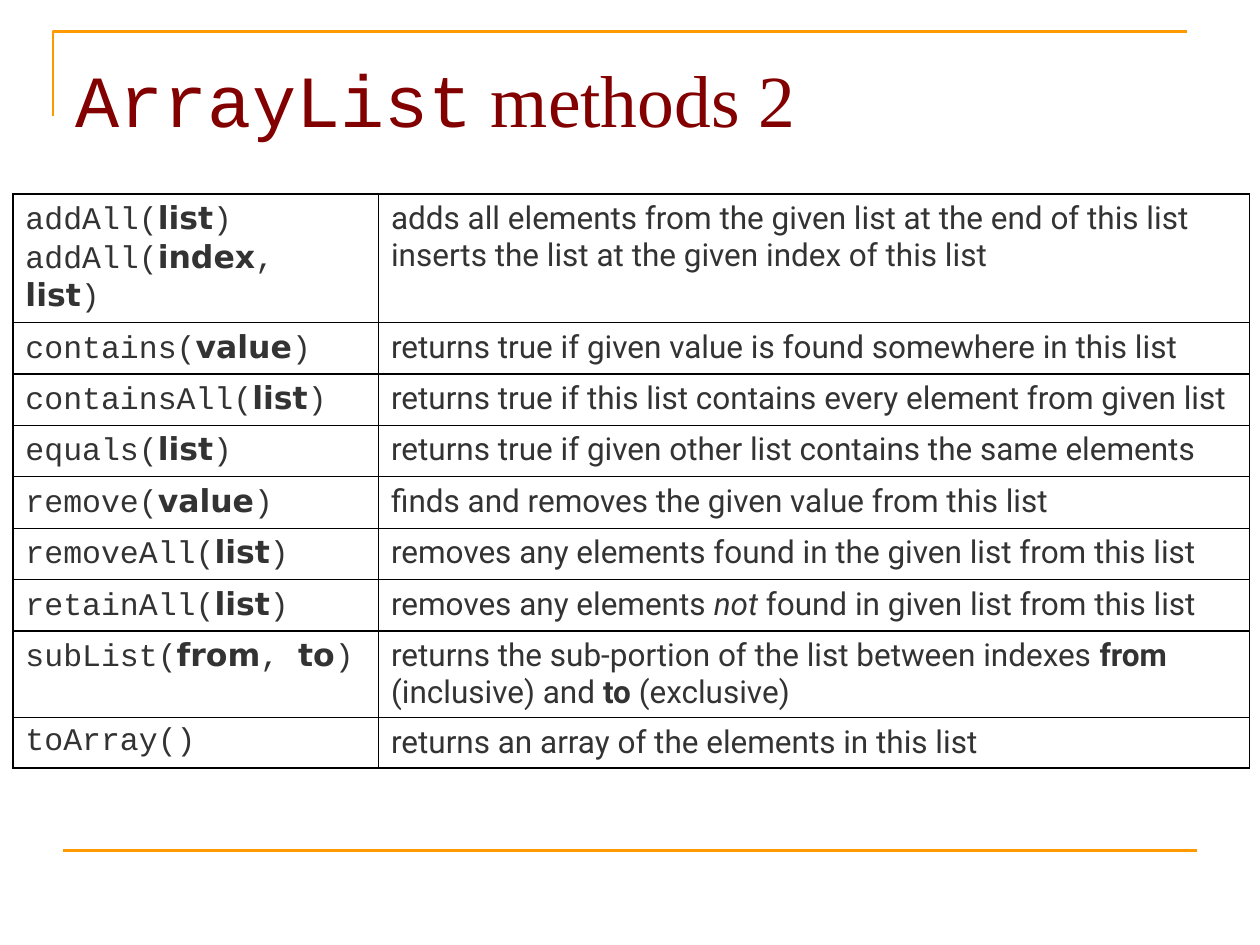
from lxml.etree import SubElement
from pptx import Presentation
from pptx.dml.color import RGBColor
from pptx.enum.shapes import MSO_CONNECTOR as Connector
from pptx.enum.text import MSO_ANCHOR as Anchor, PP_ALIGN as Align
from pptx.oxml.ns import qn
from pptx.util import Cm, Pt

ORANGE = RGBColor(0xFF, 0x99, 0x00)
MAROON = RGBColor(0x82, 0x00, 0x00)
GREY = RGBColor(0x33, 0x33, 0x33)
BLACK = RGBColor(0x00, 0x00, 0x00)

CODE, ARGUMENT, PROSE, HEADING = "Courier New", "DejaVu Sans", "Roboto", "Times New Roman"

# Each row: height in cm, method lines, description lines (*bold*, _italic_)
METHODS = [
    (2.58, ["addAll(*list*)", "addAll(*index*, *list*)"],
     ["adds all elements from the given list at the end of this list",
      "inserts the list at the given index of this list"]),
    (1.04, ["contains(*value*)"],
     ["returns true if given value is found somewhere in this list"]),
    (1.03, ["containsAll(*list*)"],
     ["returns true if this list contains every element from given list"]),
    (1.03, ["equals(*list*)"],
     ["returns true if given other list contains the same elements"]),
    (1.04, ["remove(*value*)"],
     ["finds and removes the given value from this list"]),
    (1.03, ["removeAll(*list*)"],
     ["removes any elements found in the given list from this list"]),
    (1.03, ["retainAll(*list*)"],
     ["removes any elements _not_ found in given list from this list"]),
    (1.75, ["subList(*from*, *to*)"],
     ["returns the sub-portion of the list between indexes *from*"
      " (inclusive) and *to *(exclusive)"]),
    (1.01, ["toArray()"],
     ["returns an array of the elements in this list"]),
]


def add_run(paragraph, text, **font_format):
    run = paragraph.add_run()
    run.text = text
    color = font_format.pop("color")
    for name, value in font_format.items():
        setattr(run.font, name, value)
    run.font.color.rgb = color


def fill_cell(cell, lines, plain_font, bold_font):
    cell.fill.background()
    frame = cell.text_frame
    for number, line in enumerate(lines):
        paragraph = frame.add_paragraph() if number else frame.paragraphs[0]
        for i, part in enumerate(line.split("*")):
            for j, piece in enumerate(part.split("_")):
                if piece:
                    add_run(paragraph, piece, name=bold_font if i % 2 else plain_font,
                            size=Pt(18), bold=i % 2 == 1, italic=j % 2 == 1, color=GREY)
    # Thin black border on all four sides, placed before the fill
    properties = cell._tc.get_or_add_tcPr()
    for position, side in enumerate(("a:lnL", "a:lnR", "a:lnT", "a:lnB")):
        border = SubElement(properties, qn(side), w=str(Pt(1)))
        SubElement(SubElement(border, qn("a:solidFill")), qn("a:srgbClr"), val=str(BLACK))
        properties.insert(position, border)


deck = Presentation()
deck.slide_width, deck.slide_height = Cm(25.4), Cm(19.05)
slide = deck.slides.add_slide(deck.slide_layouts[5])

# Corner rule above the title
builder = slide.shapes.build_freeform(Cm(1.07), Cm(2.34))
builder.add_line_segments([(Cm(1.07), Cm(0.64)), (Cm(23.93), Cm(0.64))], close=False)
corner_rule = builder.convert_to_shape()
corner_rule.fill.background()
corner_rule.shadow.inherit = False

# Rule at the foot
foot_rule = slide.shapes.add_connector(
    Connector.STRAIGHT, Cm(1.27), Cm(17.15), Cm(24.13), Cm(17.15))
SubElement(foot_rule._element.spPr, qn("a:effectLst"))

for rule in (corner_rule, foot_rule):
    rule.line.color.rgb = ORANGE
    rule.line.width = Pt(1.5)

# Title
title = slide.shapes.title
title_box = {"left": Cm(1.27), "top": Cm(0.76), "width": Cm(22.86), "height": Cm(2.62)}
for name, value in title_box.items():
    setattr(title, name, value)
title.text_frame.vertical_anchor = Anchor.TOP
title.text_frame.margin_top = Cm(0.32)
heading = title.text_frame.paragraphs[0]
heading.alignment = Align.LEFT
for text, font in (("ArrayList", CODE), (" methods 2", HEADING)):
    add_run(heading, text, name=font, size=Pt(42), color=MAROON)

# Method table
table_height = Cm(sum(height for height, _, _ in METHODS))
table = slide.shapes.add_table(
    len(METHODS), 2, Cm(0.26), Cm(3.91), Cm(24.93), table_height).table
table.first_row = table.horz_banding = False
for column, width in zip(table.columns, (7.37, 17.56)):
    column.width = Cm(width)
for row, (height, calls, description) in zip(table.rows, METHODS):
    row.height = Cm(height)
    fill_cell(row.cells[0], calls, CODE, ARGUMENT)
    fill_cell(row.cells[1], description, PROSE, PROSE)

deck.save("out.pptx")
